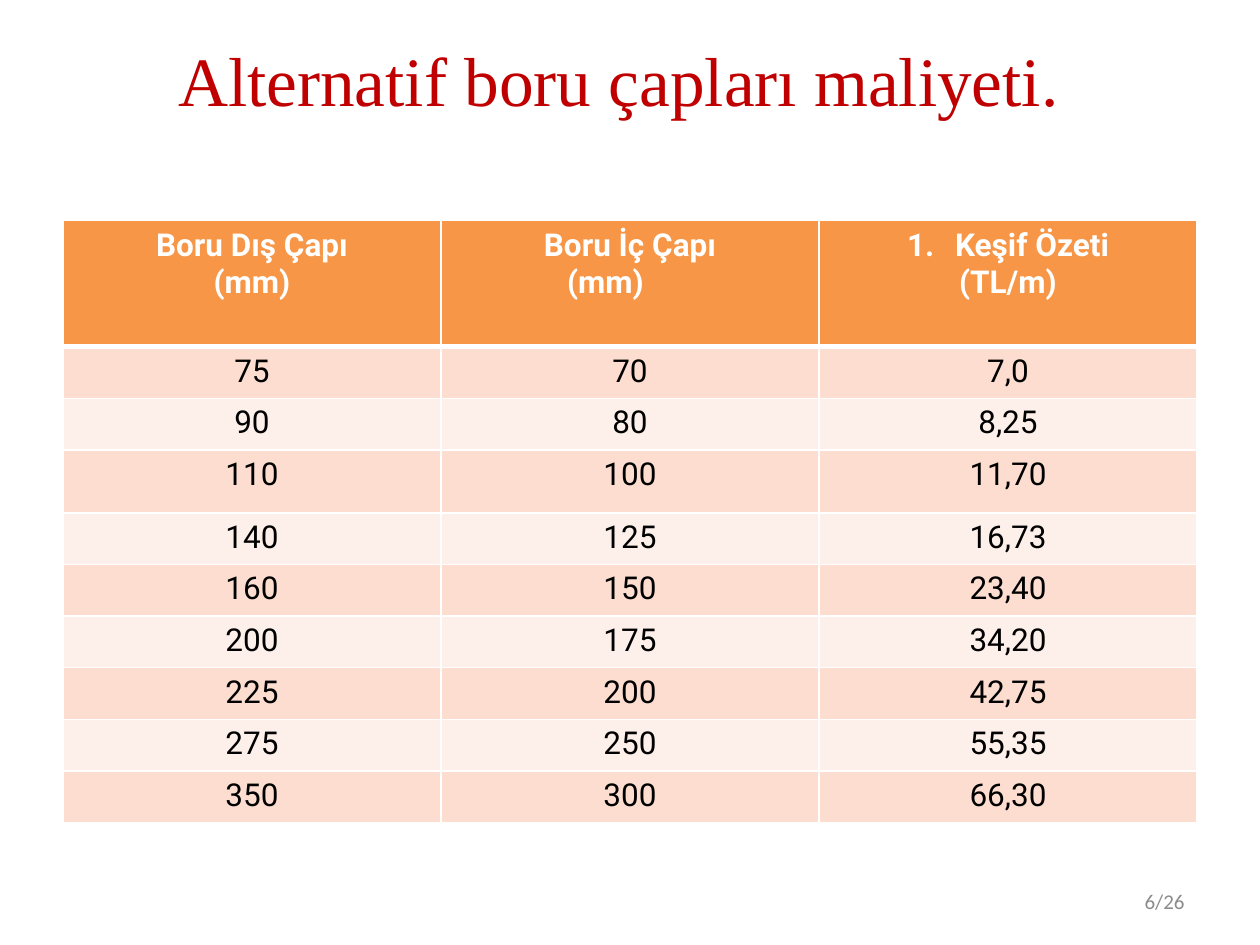
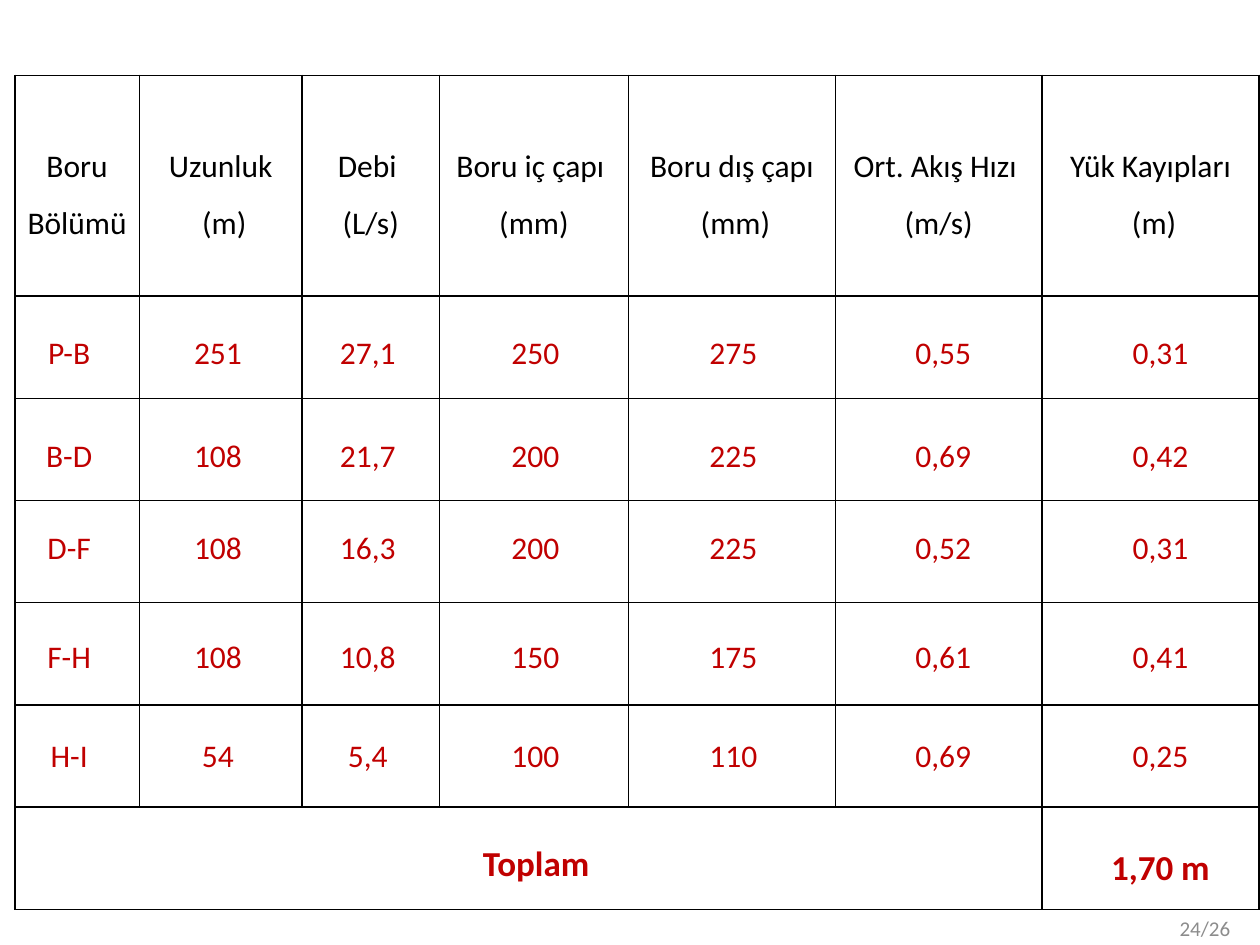
from lxml.etree import SubElement as Sub
from pptx import Presentation
from pptx.dml.color import RGBColor
from pptx.enum.text import MSO_ANCHOR as Anchor, PP_ALIGN as Align
from pptx.oxml.ns import qn
from pptx.util import Cm, Pt

RED = RGBColor(0xC0, 0x00, 0x00)
BLACK = RGBColor(0x00, 0x00, 0x00)
WHITE = RGBColor(0xFF, 0xFF, 0xFF)
GREY = RGBColor(0x8C, 0x8C, 0x8C)
ORANGE = RGBColor(0xF7, 0x96, 0x46)
DARK = RGBColor(0xFC, 0xDD, 0xCF)
LIGHT = RGBColor(0xFD, 0xEF, 0xE9)

COSTS = [
    ("Boru Dış Çapı\n(mm)", "Boru İç Çapı\n(mm) \t", "Keşif Özeti\n(TL/m)"),
    ("75", "70", "7,0"),
    ("90", "80", "8,25"),
    ("110", "100", "11,70"),
    ("140", "125", "16,73"),
    ("160", "150", "23,40"),
    ("200", "175", "34,20"),
    ("225", "200", "42,75"),
    ("275", "250", "55,35"),
    ("350", "300", "66,30"),
]
HEADS = ["Boru Bölümü", "Uzunluk\n (m)", "Debi \n(L/s)", "Boru iç çapı \n(mm)",
         "Boru dış çapı\n (mm)", "Ort. Akış Hızı \n(m/s)", "Yük Kayıpları\n (m)"]
LOSSES = [
    ("P-B", "251", "27,1", "250", "275", "0,55", "0,31"),
    ("B-D", "108", "21,7", "200", "225", "0,69", "0,42"),
    ("D-F", "108", "16,3", "200", "225", "0,52", "0,31"),
    ("F-H", "108", "10,8", "150", "175", "0,61", "0,41"),
    ("H-I", "54", "5,4", "100", "110", "0,69", "0,25"),
]


def write(frame, text, face="Calibri", size=18, color=RED, bold=False,
          align=Align.CENTER, gap=None):
    """Fill a text frame with lines of one style."""
    frame.text = text
    for para in frame.paragraphs:
        para.alignment = align
        para.line_spacing = gap
        font = para.font
        font.name, font.size, font.bold = face, Pt(size), bold
        font.color.rgb = color


def label(slide, box, text, **style):
    """Add a wrapping text box and return its frame."""
    frame = slide.shapes.add_textbox(*map(Cm, box)).text_frame
    frame.word_wrap = True
    write(frame, text, **style)
    return frame


def page(slide, left, top, text):
    """Add the page number."""
    frame = label(slide, (left, top, 5.92, 1.02), text, size=12, color=GREY,
                  align=Align.RIGHT)
    frame.vertical_anchor = Anchor.MIDDLE


def edge(cell, color, low=1):
    """Draw the four cell borders, the lower one with its own width."""
    props = cell._tc.get_or_add_tcPr()
    for spot, side in enumerate("LRTB"):
        width = Pt(low if side == "B" else 1)
        line = Sub(props, qn(f"a:ln{side}"), w=str(width))
        Sub(Sub(line, qn("a:solidFill")), qn("a:srgbClr"), val=str(color))
        props.insert(spot, line)


def grid(slide, left, top, cols, rows):
    """Add a plain table with the given column widths and row heights."""
    box = (left, top, sum(cols), sum(rows))
    table = slide.shapes.add_table(len(rows), len(cols), *map(Cm, box)).table
    table.first_row = table.horz_banding = False
    for col, width in zip(table.columns, cols):
        col.width = Cm(width)
    for row, height in zip(table.rows, rows):
        row.height = Cm(height)
    return table


def number(para):
    """Turn a paragraph into a numbered item."""
    props = para._p.get_or_add_pPr()
    props.set("marL", str(Cm(0.97)))
    props.set("indent", str(Cm(-0.97)))
    Sub(props, qn("a:buFont"), typeface="+mj-lt")
    Sub(props, qn("a:buAutoNum"), type="arabicPeriod")
    props.append(props.find(qn("a:defRPr")))


def costs(slide, left, top):
    """Build the banded cost table."""
    rows = [2.54] + [1.04] * 9
    rows[3] = 1.27
    table = grid(slide, left, top, [7.62] * 3, rows)
    for r, row in enumerate(COSTS):
        head = r == 0
        for c, text in enumerate(row):
            cell = table.cell(r, c)
            write(cell.text_frame, text, "Roboto", bold=head,
                  color=WHITE if head else BLACK)
            cell.fill.solid()
            cell.fill.fore_color.rgb = ORANGE if head else (LIGHT, DARK)[r % 2]
            edge(cell, WHITE, 3 if head else 1)
    number(table.cell(0, 2).text_frame.paragraphs[0])


def losses(slide, left, top):
    """Build the ruled head loss table and the values laid over it."""
    cols = [2.51, 3.28, 2.77, 3.81, 4.17, 4.17, 4.37]
    table = grid(slide, left, top, cols, [4.45] + [2.06] * 6)
    for cell in table.iter_cells():
        cell.fill.background()
        edge(cell, BLACK)
    for c, text in enumerate(HEADS):
        cell = table.cell(0, c)
        cell.vertical_anchor = Anchor.MIDDLE
        cell.margin_left = cell.margin_right = Cm(0.18)
        cell.margin_top = cell.margin_bottom = 0
        write(cell.text_frame, text, color=BLACK, gap=1.5)
    table.cell(6, 0).merge(table.cell(6, 5))

    xs = [-0.2, 2.8, 5.82, 9.2, 13.19, 17.42, 21.8]
    ys = [5.07, 7.14, 9, 11.2, 13.19]
    for y, row in zip(ys, LOSSES):
        for x, text in zip(xs, row):
            label(slide, (left + x, top + y, 2.59, 1.02), text)
    label(slide, (left + 7.83, top + 15.32, 5.36, 1.12), "Toplam",
          size=20, bold=True)
    label(slide, (left + xs[-1], top + 15.4, 2.59, 1.12), "1,70 m",
          size=20, bold=True)


def title(slide, box, text):
    """Add the slide title."""
    frame = label(slide, box, text, face="Times New Roman", size=39.6)
    frame.margin_top = 0
    frame.margin_right = Cm(0.7)


def main():
    """Build and save both slides."""
    deck = Presentation()
    deck.slide_width, deck.slide_height = Cm(25.4), Cm(19.05)
    blank = deck.slide_layouts[6]

    slide = deck.slides.add_slide(blank)
    title(slide, (1.27, 0.76, 22.86, 3.18), "Alternatif boru çapları maliyeti.")
    costs(slide, 1.27, 4.45)
    page(slide, 18.21, 17.65, "6/26")

    slide = deck.slides.add_slide(blank)
    losses(slide, 0.3, 1.52)
    page(slide, 19.13, 18.21, "24/26")

    deck.save("out.pptx")


if __name__ == "__main__":
    main()
